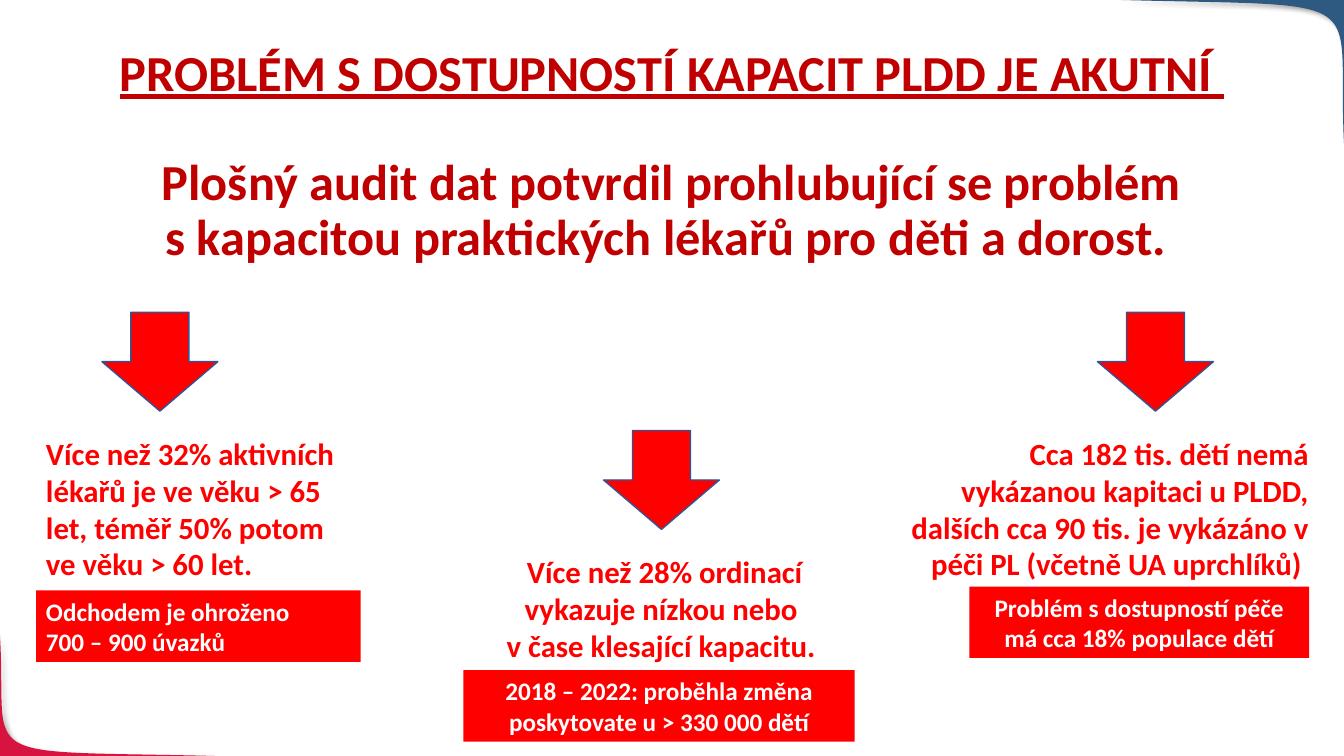
from dataclasses import dataclass
from lxml import etree
from pptx import Presentation
from pptx import util as u
from pptx.dml.color import RGBColor
from pptx.enum import shapes, text
from pptx.oxml.ns import qn

Cm, Pt = u.Cm, u.Pt
ALIGN = text.PP_ALIGN


@dataclass(frozen=True)
class Theme:
    font: str = "Calibri"
    dark: str = "C00000"
    red: str = "FF0000"
    edge: str = "325491"
    white: str = "FFFFFF"
    rose: str = "D71440"
    blue: str = "2E5980"
    head: int = 36
    body: int = 22
    tag: int = 18


THEME = Theme()
WIDE, HIGH = 33.87, 19.05


def paint(part, color):
    part.fill.solid()
    part.fill.fore_color.rgb = RGBColor.from_string(color)


def write(frame, lines, size, color, align):
    frame.word_wrap = True
    frame.text = "\n".join(lines)
    for para in frame.paragraphs:
        para.alignment = align
        for run in para.runs:
            run.font.name = THEME.font
            run.font.size = Pt(size)
            run.font.bold = True
            run.font.color.rgb = RGBColor.from_string(color)


def shade(shape):
    effect = etree.SubElement(shape._element.spPr, qn("a:effectLst"))
    outer = etree.SubElement(effect, qn("a:outerShdw"), blurRad=str(Pt(4)),
                             dist=str(Pt(3)), dir="2700000", algn="tl")
    tone = etree.SubElement(outer, qn("a:srgbClr"), val="000000")
    etree.SubElement(tone, qn("a:alpha"), val="40000")


def corner(slide, curve, tip, color, steps=40):
    points = []
    for step in range(steps + 1):
        t = step / steps
        rates = ((1 - t) ** 3, 3 * t * (1 - t) ** 2, 3 * t * t * (1 - t), t ** 3)
        points.append(tuple(Cm(sum(r * p[axis] for r, p in zip(rates, curve)))
                            for axis in (0, 1)))
    points.append((Cm(tip[0]), Cm(tip[1])))
    pen = slide.shapes.build_freeform(*points[0])
    pen.add_line_segments(points[1:], close=True)
    shape = pen.convert_to_shape()
    paint(shape, color)
    shape.line.fill.background()
    shade(shape)


def heading(slide, box, lines):
    title = slide.shapes.title
    title.left, title.top, title.width, title.height = map(Cm, box)
    frame = title.text_frame
    frame.auto_size = text.MSO_AUTO_SIZE.NONE
    frame.vertical_anchor = text.MSO_ANCHOR.TOP
    write(frame, lines, THEME.head, THEME.dark, ALIGN.CENTER)
    for para in frame.paragraphs:
        para.line_spacing = 0.9
    first, second = frame.paragraphs
    second.space_before = Pt(39.5)
    for run in first.runs:
        run.font.underline = True


def block(slide, kind, box, color):
    shape = slide.shapes.add_shape(kind, *map(Cm, box))
    shape.shadow.inherit = False
    paint(shape, color)
    shape.line.fill.background()
    return shape


def column(slide, box, arrow, tag, lines, notes, align, inner):
    left, top, width, height = box
    point = block(slide, shapes.MSO_SHAPE.DOWN_ARROW,
                  (left + arrow, top, 2.92, 2.49), THEME.red)
    paint(point.line, THEME.edge)
    point.line.width = Pt(1)
    body = slide.shapes.add_textbox(Cm(left), Cm(top + 2.95),
                                    Cm(width), Cm(height))
    write(body.text_frame, lines, THEME.body, THEME.red, align)
    shift, gap, span = tag
    label = block(slide, shapes.MSO_SHAPE.RECTANGLE,
                  (left + shift, top + 2.95 + height + gap, span, 1.8), THEME.red)
    write(label.text_frame, notes, THEME.tag, THEME.white, inner)


def main():
    deck = Presentation()
    deck.slide_width, deck.slide_height = Cm(WIDE), Cm(HIGH)
    slide = deck.slides.add_slide(deck.slide_layouts[5])
    corner(slide, ((5.41, HIGH), (-0.86, 18.9), (0.2, 19.28), (0, 16)),
           (0, HIGH), THEME.rose)
    corner(slide, ((28.22, 0), (34.8, 0.18), (33.68, -0.25), (WIDE, 3.61)),
           (WIDE, 0), THEME.blue)
    heading(slide, (0, 1.07, WIDE, 5.59), [
        "PROBLÉM S DOSTUPNOSTÍ KAPACIT PLDD JE AKUTNÍ ",
        "Plošný audit dat potvrdil prohlubující se problém\v"
        "s kapacitou praktických lékařů pro děti a dorost. "])
    column(slide, (0.91, 7.87, 8.18, 4.01), 1.66, (0, 0.05, 8.18),
           ["Více než 32% aktivních lékařů je ve věku > 65 let, "
            "téměř 50% potom ve věku > 60 let."],
           ["Odchodem je ohroženo", "700 – 900 úvazků"],
           ALIGN.LEFT, ALIGN.LEFT)
    column(slide, (12.47, 10.85, 8.56, 3.07), 2.74, (-0.79, 0.02, 9.86),
           ["Více než 28% ordinací vykazuje nízkou nebo ",
            "v čase klesající kapacitu. "],
           ["2018 – 2022: proběhla změna poskytovate u > 330 000 dětí"],
           ALIGN.CENTER, ALIGN.CENTER)
    column(slide, (22.56, 7.87, 10.67, 4.01), 5.1, (1.87, -0.05, 8.56),
           ["Cca 182 tis. dětí nemá vykázanou kapitaci u PLDD, dalších "
            "cca 90 tis. je vykázáno v péči PL (včetně UA uprchlíků) "],
           ["Problém s dostupností péče má cca 18% populace dětí"],
           ALIGN.RIGHT, ALIGN.CENTER)
    deck.save("out.pptx")


if __name__ == "__main__":
    main()
